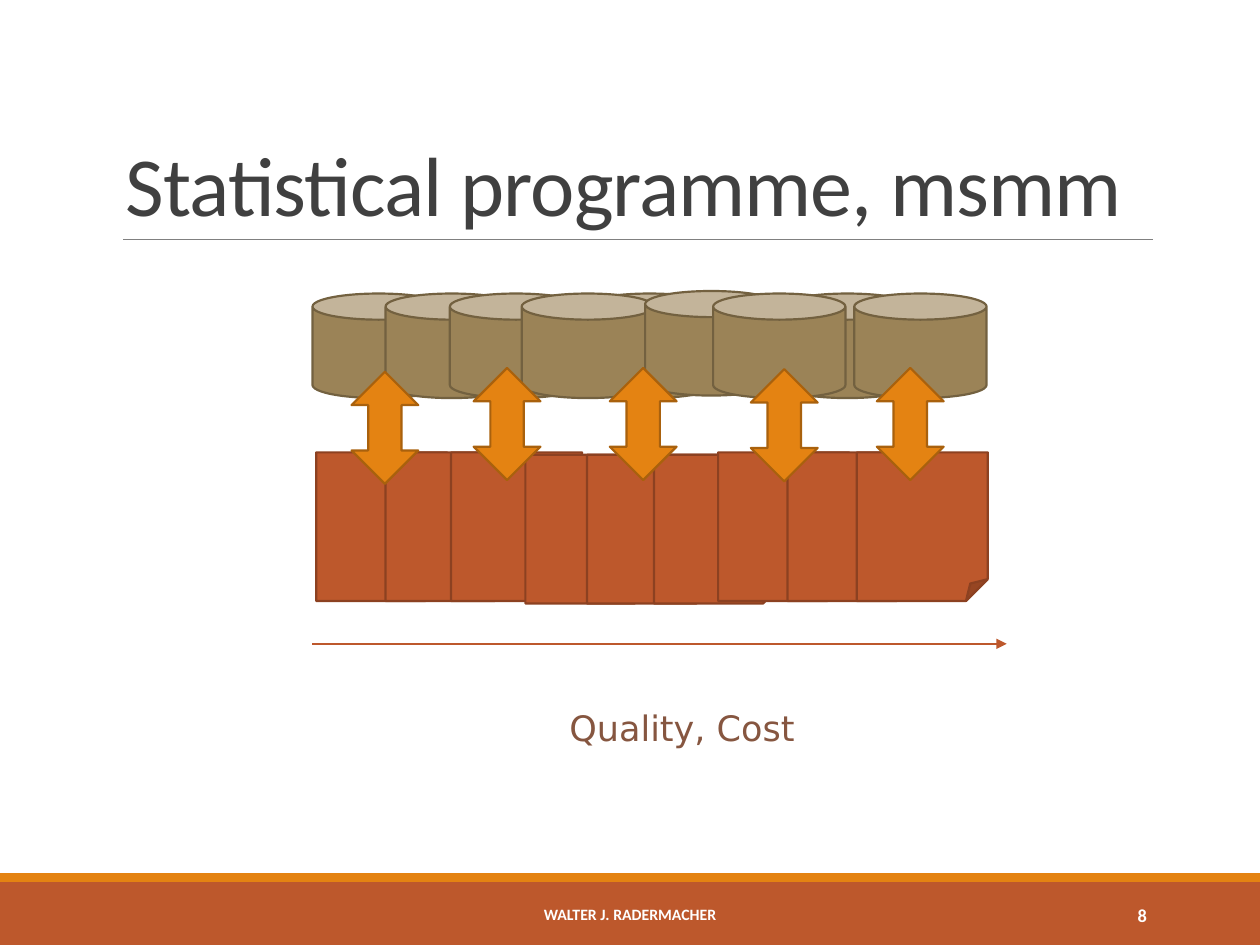
"""Build the statistical programme slide: data stores linked to processes along a quality and cost axis."""
from dataclasses import dataclass

from lxml import etree
from pptx import Presentation
from pptx import util as u
from pptx.dml.color import RGBColor
from pptx.enum import shapes, text
from pptx.oxml.ns import qn


@dataclass(frozen=True)
class Theme:
    rust: str = "BD582C"
    rust_edge: str = "8C4121"
    orange: str = "E48312"
    orange_edge: str = "A9610D"
    tan: str = "9B8357"
    tan_edge: str = "736140"
    rule: str = "808080"
    heading: str = "404040"
    caption: str = "865640"
    white: str = "FFFFFF"
    heading_size: float = 48
    caption_size: float = 20
    number_size: float = 10.5
    footer_size: float = 9
    edge_width: float = 1.25


theme = Theme()
kinds = shapes.MSO_SHAPE
anchors = text.MSO_ANCHOR
aligns = text.PP_ALIGN

prs = Presentation()
prs.slide_width, prs.slide_height = u.Inches(10), u.Inches(7.5)
slide = prs.slides.add_slide(prs.slide_layouts[6])


def add_block(kind, box, fill, edge=None):
    block = slide.shapes.add_shape(kind, *map(u.Inches, box))
    block.shadow.inherit = False
    block.fill.solid()
    block.fill.fore_color.rgb = RGBColor.from_string(fill)
    if edge:
        block.line.color.rgb = RGBColor.from_string(edge)
        block.line.width = u.Pt(theme.edge_width)
    else:
        block.line.fill.background()


def add_label(words, box, size, color, font="Calibri", anchor=anchors.TOP, align=aligns.LEFT, bold=False):
    frame = slide.shapes.add_textbox(*map(u.Inches, box)).text_frame
    frame.word_wrap = True
    frame.vertical_anchor = anchor
    paragraph = frame.paragraphs[0]
    paragraph.alignment = align
    run = paragraph.add_run()
    run.text = words
    run.font.name = font
    run.font.size = u.Pt(size)
    run.font.bold = bold
    run.font.color.rgb = RGBColor.from_string(color)
    return frame


add_block(kinds.RECTANGLE, (0, 7, 10, 0.5), theme.rust)
add_block(kinds.RECTANGLE, (0, 6.93, 10, 0.07), theme.orange)

heading = add_label("Statistical programme, msmm", (0.9, 0.31, 8.25, 1.59),
                    theme.heading_size, theme.heading, anchor=anchors.BOTTOM).paragraphs[0]
heading.line_spacing = 0.85
heading.runs[0].font._element.set("spc", "-50")

add_label("WALTER J. RADERMACHER", (3.02, 7.06, 3.96, 0.4), theme.footer_size, theme.white,
          anchor=anchors.MIDDLE, align=aligns.CENTER, bold=True)
add_label("8", (8.12, 7.06, 1.08, 0.4), theme.number_size, theme.white,
          anchor=anchors.MIDDLE, align=aligns.RIGHT, bold=True)

for left in (2.48, 3.06, 3.57, 4.63, 6.2, 4.14, 5.12, 5.66, 6.78):
    top = 2.31 if left == 5.12 else 2.33
    add_block(kinds.CAN, (left, top, 1.05, 0.83), theme.tan, theme.tan_edge)

for left in (2.51, 3.06, 3.58, 4.17, 4.66, 5.19, 5.7, 6.25, 6.8):
    top = 3.61 if 4 < left < 5.5 else 3.59
    add_block(kinds.FOLDED_CORNER, (left, top, 1.04, 1.18), theme.rust, theme.rust_edge)

for start, end, y, color, width, pointed in (
    (0.98, 9.15, 1.9, theme.rule, 0.5, False),
    (2.48, 7.99, 5.11, theme.rust, 1, True),
):
    axis = slide.shapes.add_connector(
        shapes.MSO_CONNECTOR.STRAIGHT, u.Inches(start), u.Inches(y), u.Inches(end), u.Inches(y))
    axis.line.color.rgb = RGBColor.from_string(color)
    axis.line.width = u.Pt(width)
    if pointed:
        etree.SubElement(axis.line._get_or_add_ln(), qn("a:tailEnd"), type="triangle")
    etree.SubElement(axis._element.spPr, qn("a:effectLst"))

caption = add_label("Quality, Cost", (4.42, 5.56, 2.43, 0.44),
                    theme.caption_size, theme.caption, font="DejaVu Sans")
caption.auto_size = text.MSO_AUTO_SIZE.SHAPE_TO_FIT_TEXT

for left, top in ((2.79, 2.95), (3.76, 2.92), (4.84, 2.92), (5.96, 2.93), (6.96, 2.92)):
    add_block(kinds.UP_DOWN_ARROW, (left, top, 0.53, 0.89), theme.orange, theme.orange_edge)

prs.save("out.pptx")
